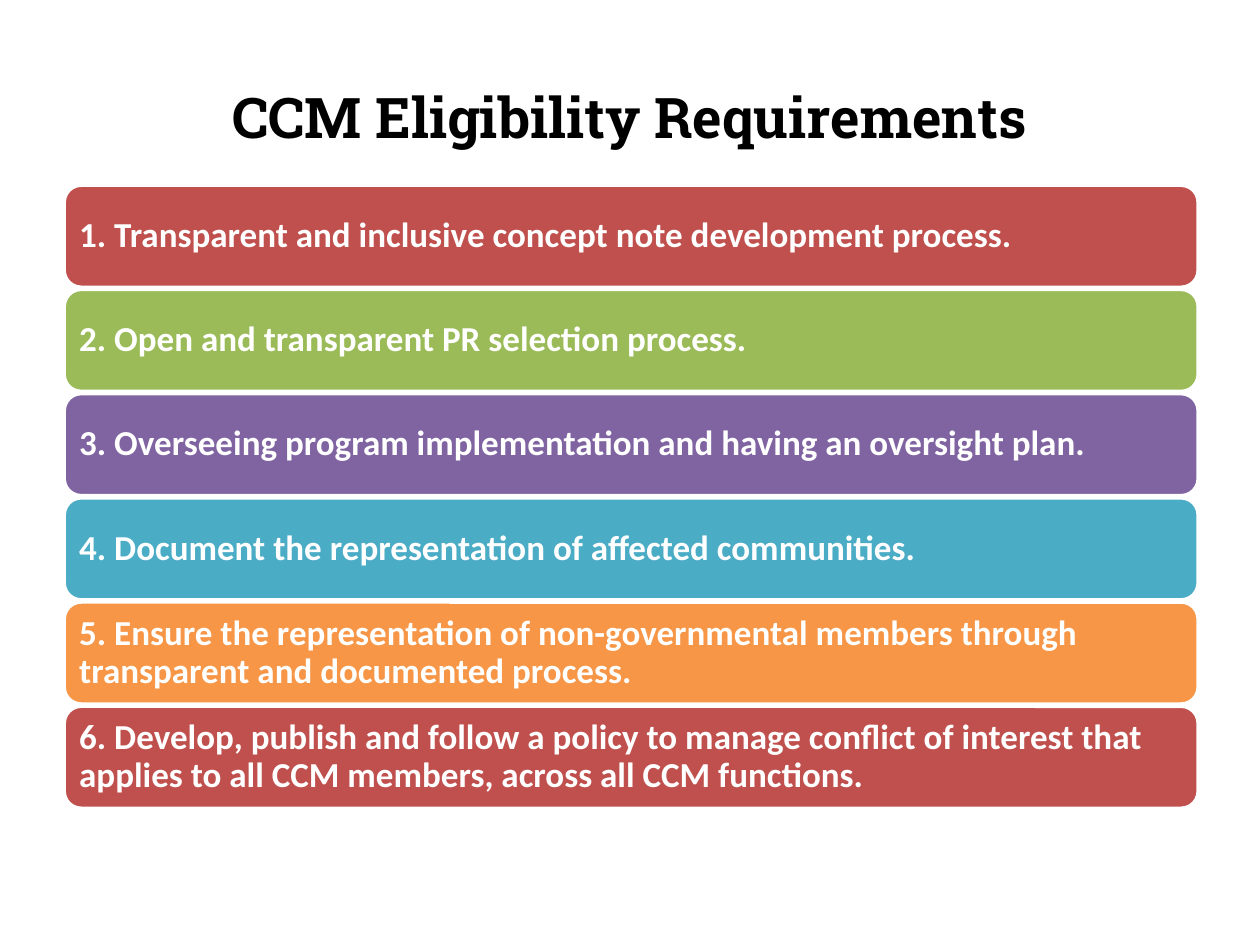
from pptx import Presentation
from pptx.dml.color import RGBColor
from pptx.enum.shapes import MSO_SHAPE
from pptx.enum.text import MSO_ANCHOR, PP_ALIGN
from pptx.util import Inches, Pt

ROUNDED = MSO_SHAPE.ROUNDED_RECTANGLE
MIDDLE = MSO_ANCHOR.MIDDLE
LEFT, CENTER = PP_ALIGN.LEFT, PP_ALIGN.CENTER

TITLE_ONLY = 5
BAR_LEFT, BAR_TOP = 0.51, 1.47
BAR_WIDTH, BAR_HEIGHT = 9, 0.81
ROW_STEP = 0.827
WHITE = "FFFFFF"

REQUIREMENTS = [
    ("Transparent and inclusive concept note development process.", "C0504D"),
    ("Open and transparent PR selection process.", "9BBB59"),
    ("Overseeing program implementation and having an oversight plan.", "8064A2"),
    ("Document the representation of affected communities.", "4BACC6"),
    ("Ensure the representation of non-governmental members through "
     "transparent and documented process.", "F79646"),
    ("Develop, publish and follow a policy to manage conflict of interest "
     "that applies to all CCM members, across all CCM functions.", "C0504D"),
]


def color(value):
    return RGBColor.from_string(value)


def write(box, text, *, font, size, ink, align, spacing=1.0):
    frame = box.text_frame
    frame.word_wrap = True
    frame.vertical_anchor = MIDDLE
    para = frame.paragraphs[0]
    para.alignment = align
    para.line_spacing = spacing
    span = para.add_run()
    span.text = text
    span.font.name = font
    span.font.size = Pt(size)
    span.font.bold = True
    span.font.color.rgb = color(ink)


deck = Presentation()
deck.slide_width, deck.slide_height = Inches(10), Inches(7.5)
page = deck.slides.add_slide(deck.slide_layouts[TITLE_ONLY])

# Title
title = page.shapes.title
title.left, title.top = Inches(0.5), Inches(0.3)
title.width, title.height = Inches(9), Inches(1.25)
write(title, "CCM Eligibility Requirements",
      font="Roboto Slab", size=32, ink="000000", align=CENTER)

# One numbered bar per requirement
for row, (requirement, fill) in enumerate(REQUIREMENTS):
    bar = page.shapes.add_shape(
        ROUNDED, Inches(BAR_LEFT), Inches(BAR_TOP + row * ROW_STEP),
        Inches(BAR_WIDTH), Inches(BAR_HEIGHT))
    bar.shadow.inherit = False
    bar.fill.solid()
    bar.fill.fore_color.rgb = color(fill)
    bar.line.color.rgb = color(WHITE)
    bar.line.width = Pt(2)
    frame = bar.text_frame
    frame.margin_left = frame.margin_right = Inches(0.08)
    frame.margin_top = frame.margin_bottom = Inches(0.08)
    write(bar, f"{row + 1}. {requirement}", font="Calibri", size=20,
          ink=WHITE, align=LEFT, spacing=0.9)

deck.save("out.pptx")
